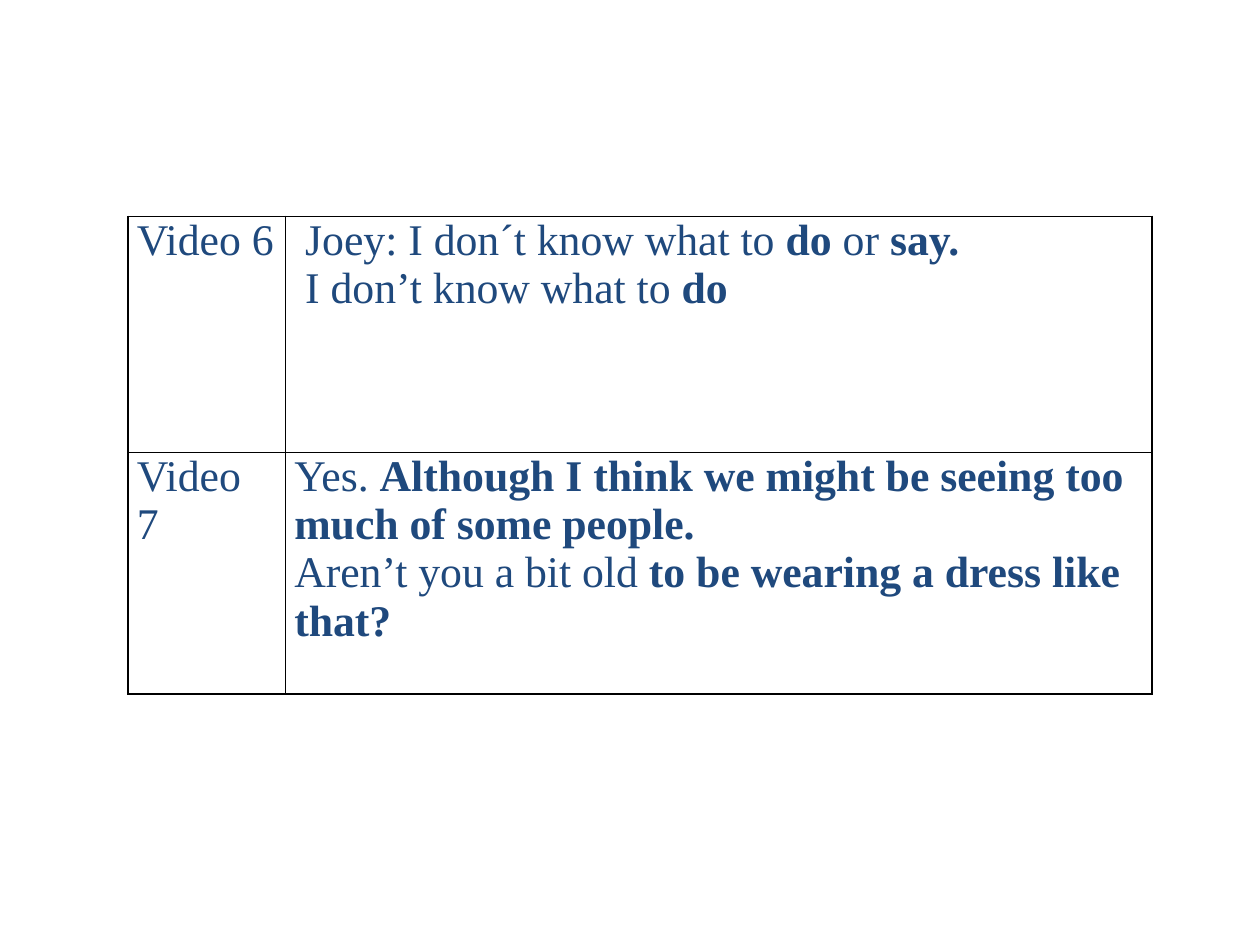
from lxml import etree
from pptx import Presentation
from pptx.dml.color import RGBColor
from pptx.oxml.ns import qn
from pptx.util import Pt

COLORS = {"text": "1F497D", "border": "000000"}
FONT = "Times New Roman"
FONT_SIZE = 25
BLANK_LAYOUT = 6
LEFT, TOP = 73.2, 123.6
COLUMN_WIDTHS = (90, 495)
ROW_HEIGHTS = (135, 138)
MARGIN = 5
WIDE_MARGIN = 11.25

# Each paragraph is a list of (text, bold) runs.
VIDEO_6_LINES = [
    [("Joey: I don´t know what to ", False), ("do", True), (" or ", False), ("say.", True)],
    [("I don’t know what to ", False), ("do", True)],
]
VIDEO_7_LINES = [
    [("Yes. ", False),
     ("Although I think we might be seeing too much of some people.", True)],
    [("Aren’t you a bit old ", False), ("to be wearing a dress like that?", True)],
]
# Each cell holds its paragraphs, left margin and right margin.
ROWS = [
    [([[("Video 6", False)]], MARGIN, MARGIN), (VIDEO_6_LINES, WIDE_MARGIN, MARGIN)],
    [([[("Video 7", False)]], MARGIN, WIDE_MARGIN), (VIDEO_7_LINES, MARGIN, MARGIN)],
]


def set_borders(cell):
    properties = cell._tc.get_or_add_tcPr()
    for position, side in enumerate(("a:lnL", "a:lnR", "a:lnT", "a:lnB")):
        line = etree.Element(qn(side), w=str(Pt(1)))
        fill = etree.SubElement(line, qn("a:solidFill"))
        etree.SubElement(fill, qn("a:srgbClr"), val=COLORS["border"])
        properties.insert(position, line)


def write_lines(text_frame, lines):
    for index, runs in enumerate(lines):
        paragraph = text_frame.paragraphs[0] if index == 0 else text_frame.add_paragraph()
        paragraph.font.name = FONT
        paragraph.font.size = Pt(FONT_SIZE)
        paragraph.font.color.rgb = RGBColor.from_string(COLORS["text"])
        for text, bold in runs:
            run = paragraph.add_run()
            run.text = text
            run.font.bold = bold


def format_cell(cell, lines, left_margin, right_margin):
    cell.margin_left, cell.margin_right = Pt(left_margin), Pt(right_margin)
    cell.margin_top = cell.margin_bottom = Pt(0)
    cell.fill.background()
    set_borders(cell)
    write_lines(cell.text_frame, lines)


def add_dialogue_table(slide):
    table = slide.shapes.add_table(
        len(ROWS), len(COLUMN_WIDTHS), Pt(LEFT), Pt(TOP),
        Pt(sum(COLUMN_WIDTHS)), Pt(sum(ROW_HEIGHTS))).table
    table.first_row = table.horz_banding = False
    for column, width in zip(table.columns, COLUMN_WIDTHS):
        column.width = Pt(width)
    for row, height, contents in zip(table.rows, ROW_HEIGHTS, ROWS):
        row.height = Pt(height)
        for cell, content in zip(row.cells, contents):
            format_cell(cell, *content)


def main():
    presentation = Presentation()
    presentation.slide_width, presentation.slide_height = Pt(720), Pt(540)
    slide = presentation.slides.add_slide(presentation.slide_layouts[BLANK_LAYOUT])
    add_dialogue_table(slide)
    presentation.save("out.pptx")


if __name__ == "__main__":
    main()
